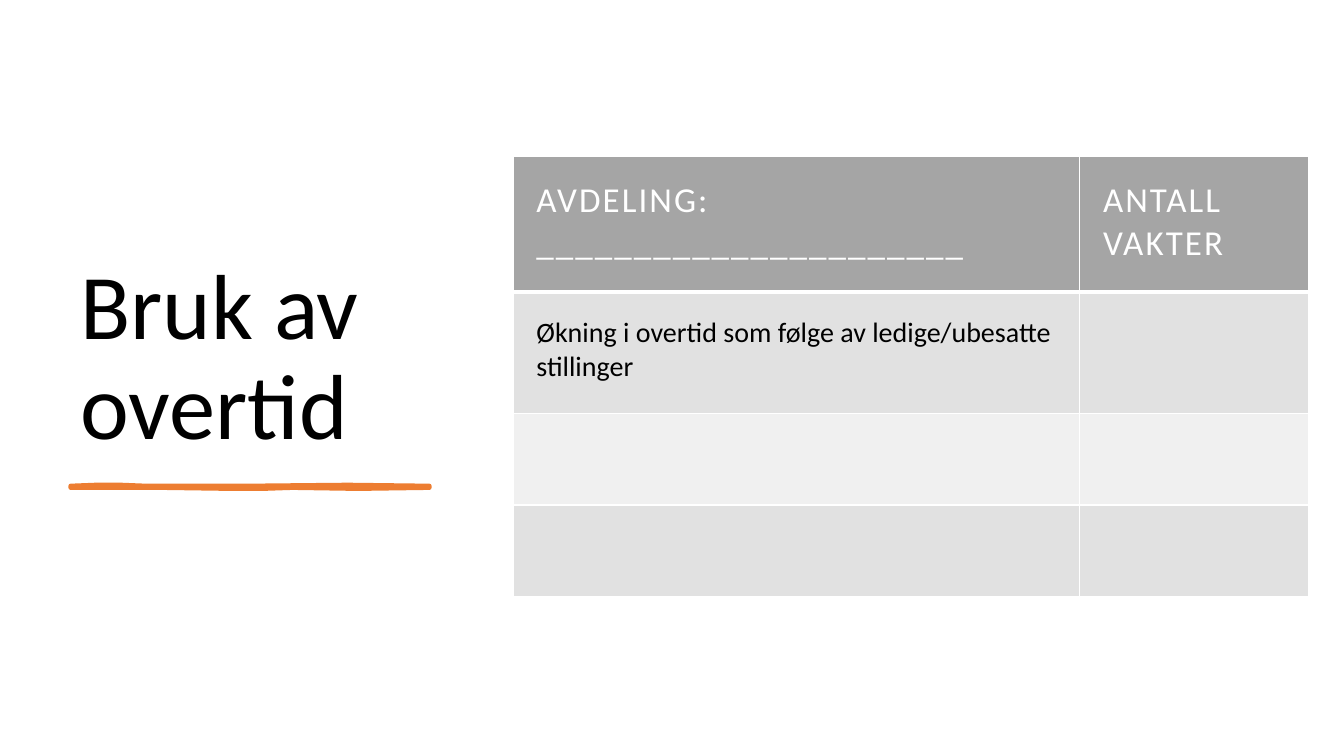
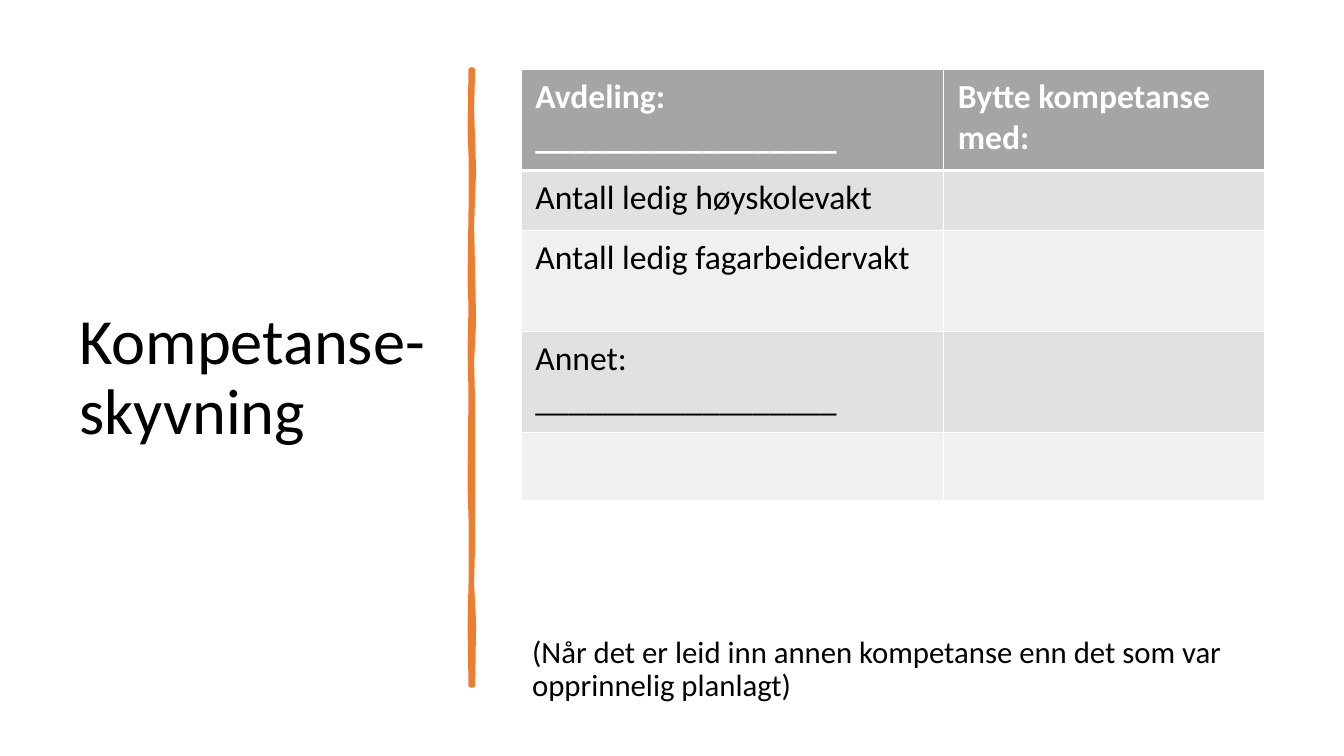
from dataclasses import dataclass

import lxml.etree
import pptx
import pptx.dml.color
import pptx.enum.text
import pptx.oxml.ns
import pptx.slide
import pptx.table
import pptx.text.text
import pptx.util
from pptx.util import Inches

FONT = "Calibri"
BLACK, WHITE, ORANGE = "000000", "FFFFFF", "ED7D31"
HEADER_FILL = "A5A5A5"
BAND_FILLS = ("E1E1E1", "F0F0F0")

Anchor = pptx.enum.text.MSO_ANCHOR
Knots = tuple[tuple[float, float], ...]


@dataclass(frozen=True)
class Box:
    left: float
    top: float
    width: float
    height: float

    def emu(self) -> tuple[int, int, int, int]:
        return (Inches(self.left), Inches(self.top),
                Inches(self.width), Inches(self.height))


@dataclass(frozen=True)
class TextStyle:
    size: float
    color: str = BLACK
    bold: bool = False
    spacing: float = 0


@dataclass(frozen=True)
class BrushStroke:
    """Both edges are knots of (distance along, offset across)."""
    left: float
    top: float
    vertical: bool
    line_width: float
    near_edge: Knots
    far_edge: Knots


@dataclass(frozen=True)
class Form:
    left: float
    top: float
    columns: tuple[float, ...]
    heights: tuple[float, ...]
    rows: tuple[tuple[str, ...], ...]
    header: TextStyle
    body: TextStyle
    margin_x: float
    margin_y: float


def rgb(color: str) -> pptx.dml.color.RGBColor:
    return pptx.dml.color.RGBColor.from_string(color)


def add_run(paragraph: pptx.text.text._Paragraph, text: str, style: TextStyle) -> None:
    run = paragraph.add_run()
    run.text = text
    run.font.name = FONT
    run.font.size = pptx.util.Pt(style.size)
    run.font.bold = style.bold
    run.font.color.rgb = rgb(style.color)
    if style.spacing:
        run._r.get_or_add_rPr().set("spc", str(round(style.spacing * 100)))


def add_text(slide: pptx.slide.Slide, box: Box, text: str, size: float,
             anchor: Anchor = Anchor.TOP, space_after: float = 0) -> None:
    frame = slide.shapes.add_textbox(*box.emu()).text_frame
    frame.word_wrap = True
    frame.vertical_anchor = anchor
    paragraph = frame.paragraphs[0]
    paragraph.line_spacing = 0.9
    paragraph.space_after = pptx.util.Pt(space_after)
    add_run(paragraph, text, TextStyle(size))


def add_brush_stroke(slide: pptx.slide.Slide, stroke: BrushStroke) -> None:
    outline = stroke.near_edge + stroke.far_edge[::-1]
    if stroke.vertical:
        outline = tuple((across, along) for along, across in outline)
    points = [(Inches(stroke.left + x), Inches(stroke.top + y)) for x, y in outline]
    builder = slide.shapes.build_freeform(*points[0])
    builder.add_line_segments(points[1:], close=True)
    shape = builder.convert_to_shape()
    shape.shadow.inherit = False
    shape.fill.solid()
    shape.fill.fore_color.rgb = rgb(ORANGE)
    shape.line.color.rgb = rgb(ORANGE)
    shape.line.width = pptx.util.Pt(stroke.line_width)
    lxml.etree.SubElement(shape.line._get_or_add_ln(), pptx.oxml.ns.qn("a:round"))


def set_borders(cell: pptx.table._Cell, widths: dict[str, float]) -> None:
    properties = cell._tc.get_or_add_tcPr()
    for side, width in widths.items():
        line = lxml.etree.SubElement(properties, pptx.oxml.ns.qn(f"a:ln{side}"),
                                     w=str(pptx.util.Pt(width)))
        fill = lxml.etree.SubElement(line, pptx.oxml.ns.qn("a:solidFill"))
        lxml.etree.SubElement(fill, pptx.oxml.ns.qn("a:srgbClr"), val=WHITE)


def add_form(slide: pptx.slide.Slide, form: Form) -> None:
    box = Box(form.left, form.top, sum(form.columns), sum(form.heights))
    table = slide.shapes.add_table(len(form.rows), len(form.columns), *box.emu()).table
    for column, width in zip(table.columns, form.columns):
        column.width = Inches(width)
    for index, (height, texts) in enumerate(zip(form.heights, form.rows)):
        table.rows[index].height = Inches(height)
        is_header = index == 0
        fill = HEADER_FILL if is_header else BAND_FILLS[(index - 1) % 2]
        borders = {"L": 1, "R": 1, "T": 1, "B": 3 if is_header else 1}
        if index == 1:
            del borders["T"]
        for cell, text in zip(table.rows[index].cells, texts):
            cell.margin_left = cell.margin_right = Inches(form.margin_x)
            cell.margin_top = cell.margin_bottom = Inches(form.margin_y)
            set_borders(cell, borders)
            cell.fill.solid()
            cell.fill.fore_color.rgb = rgb(fill)
            if text:
                add_run(cell.text_frame.paragraphs[0], text,
                        form.header if is_header else form.body)


UNDERLINE = BrushStroke(
    0.7, 4.82, False, 3,
    near_edge=((0, 0), (0.25, -0.01), (0.5, -0.01), (0.75, 0), (1.75, 0),
               (2.75, -0.01), (3.56, 0)),
    far_edge=((0, 0.02), (0.9, 0.02), (1.6, 0.03), (1.9, 0.03), (2.2, 0.02),
              (2.85, 0.03), (3.56, 0.02)),
)
DIVIDER = BrushStroke(
    4.67, 0.69, True, 3.25,
    near_edge=((0, 0), (0.6, -0.01), (0.85, 0), (1.4, 0), (2.1, -0.01), (2.35, 0),
               (2.8, -0.01), (3.2, 0), (4.1, -0.01), (4.45, 0), (5.1, 0),
               (5.5, -0.01), (6.11, 0)),
    far_edge=((0, 0.02), (0.4, 0.01), (1, 0.03), (1.55, 0.01), (2, 0.02),
              (2.5, 0.03), (2.9, 0.01), (3.3, 0.02), (4.2, 0.02), (4.7, 0.02),
              (5.1, 0.01), (5.5, 0.03), (6.11, 0.02)),
)
OVERTIME_FORM = Form(
    5.09, 1.55, (5.62, 2.27), (1.35, 1.2, 0.91, 0.91),
    rows=(
        ("AVDELING: ______________________", "ANTALL VAKTER"),
        ("Økning i overtid som følge av ledige/ubesatte stillinger", ""),
        ("", ""),
        ("", ""),
    ),
    header=TextStyle(25, WHITE, spacing=1.5), body=TextStyle(20),
    margin_x=0.23, margin_y=0.23,
)
COMPETENCE_FORM = Form(
    5.17, 0.69, (4.19, 3.18), (1, 0.6, 1, 1, 0.68),
    rows=(
        ("Avdeling: __________________", "Bytte kompetanse med:"),
        ("Antall ledig høyskolevakt", ""),
        ("Antall ledig fagarbeidervakt", ""),
        ("Annet: __________________", ""),
        ("", ""),
    ),
    header=TextStyle(24, WHITE, bold=True), body=TextStyle(24),
    margin_x=0.14, margin_y=0.07,
)


def main() -> None:
    deck = pptx.Presentation()
    deck.slide_width, deck.slide_height = Inches(13.33), Inches(7.5)
    blank = deck.slide_layouts[6]

    overtime = deck.slides.add_slide(blank)
    add_text(overtime, Box(0.7, 0.7, 3.91, 3.91), "Bruk av overtid", 66, Anchor.BOTTOM)
    add_brush_stroke(overtime, UNDERLINE)
    add_form(overtime, OVERTIME_FORM)

    competence = deck.slides.add_slide(blank)
    add_text(competence, Box(0.69, 0.7, 3.74, 6.11), "Kompetanse-skyvning", 46,
             Anchor.MIDDLE)
    add_brush_stroke(competence, DIVIDER)
    add_text(competence, Box(5.18, 6.27, 7.54, 0.86),
             "(Når det er leid inn annen kompetanse enn det som var opprinnelig planlagt)",
             22, space_after=6)
    add_form(competence, COMPETENCE_FORM)

    deck.save("out.pptx")


if __name__ == "__main__":
    main()
